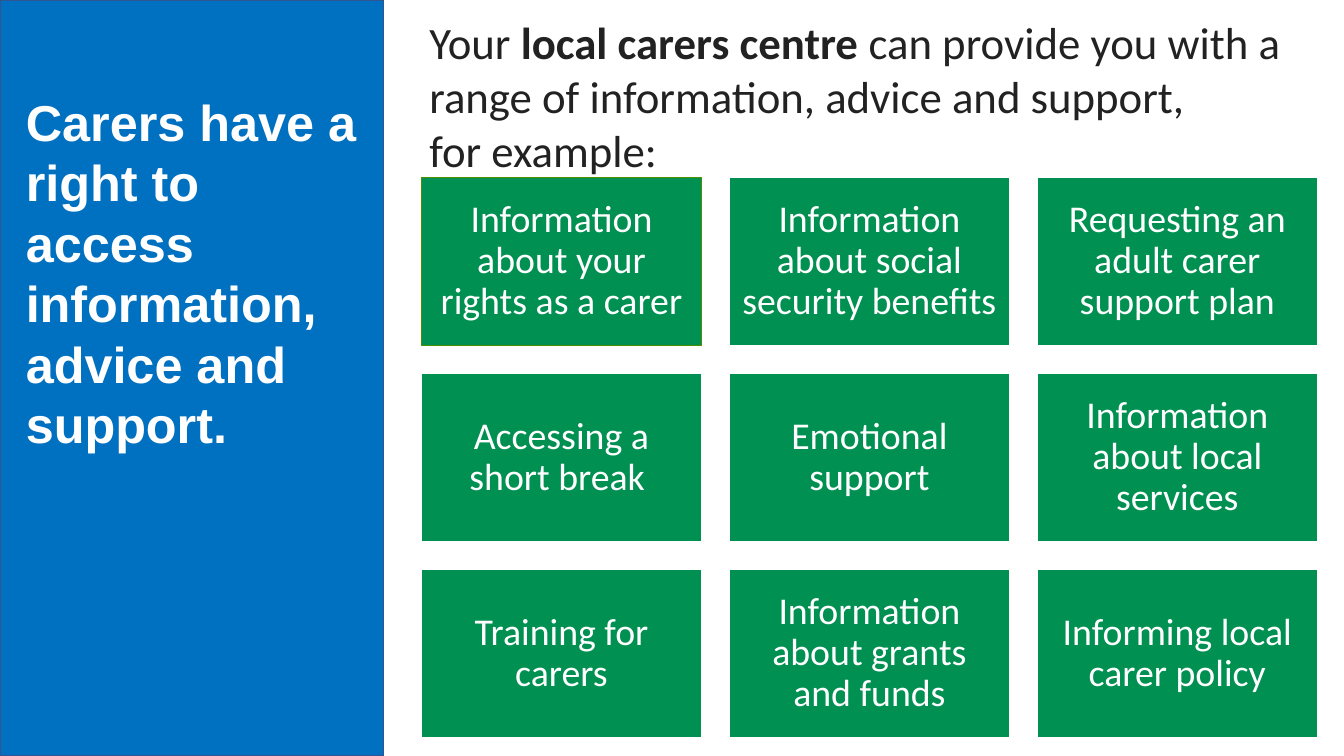
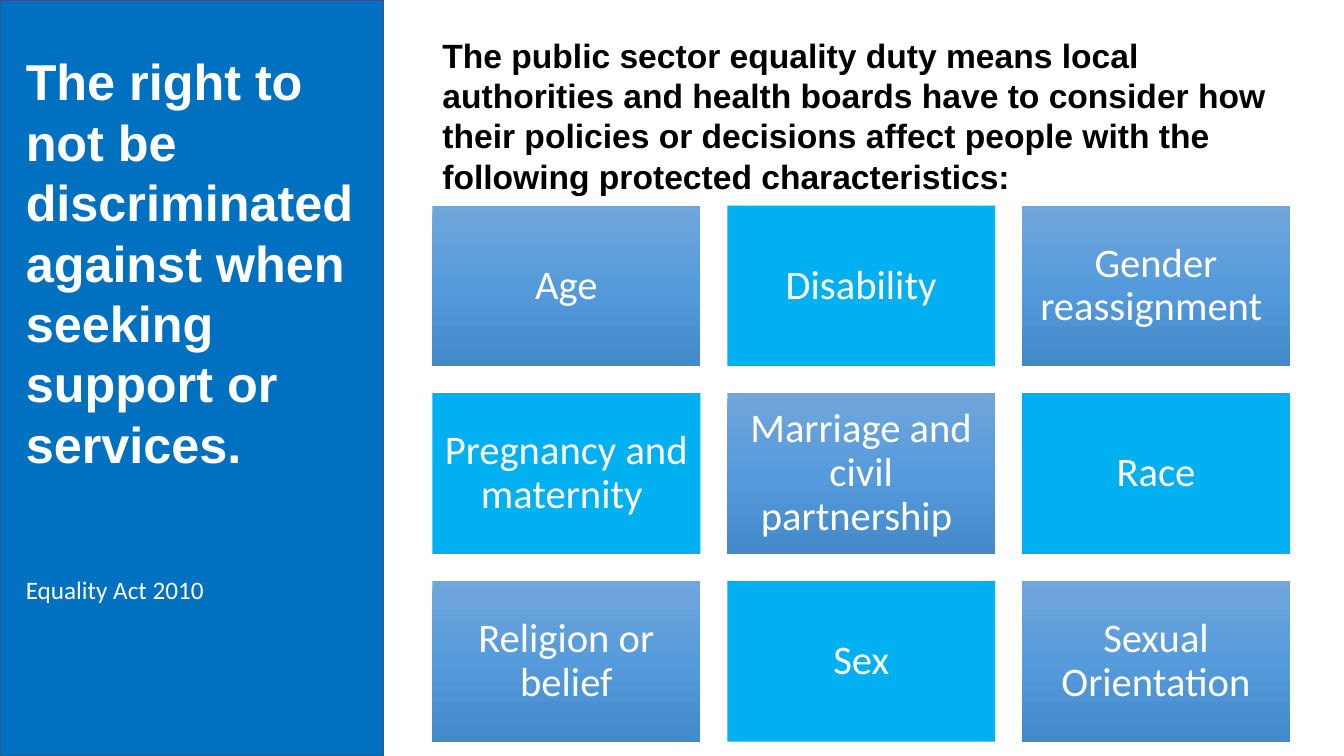
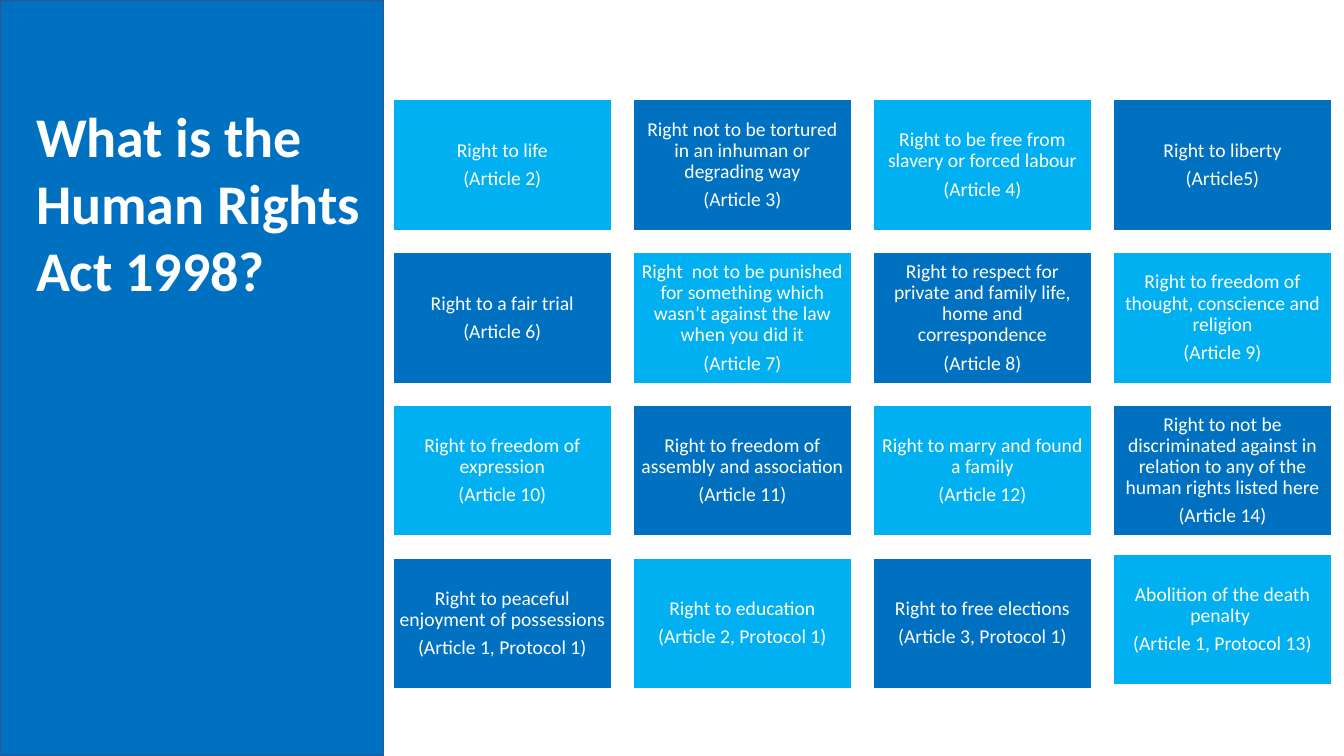
"""Build three slides on the rights of carers."""
from copy import deepcopy
from dataclasses import dataclass

from pptx import Presentation
from pptx.dml.color import RGBColor
from pptx.enum.shapes import MSO_SHAPE
from pptx.enum.text import MSO_ANCHOR, PP_ALIGN
from pptx.oxml.ns import qn
from pptx.shapes.autoshape import Shape
from pptx.slide import Slide
from pptx.text.text import TextFrame, _Run
from pptx.util import Cm, Pt

RECT = MSO_SHAPE.RECTANGLE
MIDDLE = MSO_ANCHOR.MIDDLE
CENTER = PP_ALIGN.CENTER

HUES = {
    "blue": "0070C0",
    "navy": "325491",
    "sky": "00B0F0",
    "green": "009051",
    "moss": "4E8F00",
    "white": "FFFFFF",
    "black": "000000",
    "ink": "222222",
    "pale": "71A6DB",
    "mid": "559BDB",
    "deep": "448ACA",
}
FADE = ((0, "pale"), (0.5, "mid"), (1, "deep"))


@dataclass
class Note:
    text: str
    left: float
    top: float
    width: float
    height: float
    size: float
    font: str = "Arial"
    hue: str = "white"
    bold: bool = True


@dataclass
class Grid:
    texts: list[str]
    cols: int
    left: float
    top: float
    width: float
    height: float
    gap: float
    size: float
    inset: float
    fills: tuple[str, str]
    edge: str = "white"


def shade(name: str) -> RGBColor:
    return RGBColor.from_string(HUES[name])


def style(run: _Run, size: float, font: str, hue: str, bold: bool) -> None:
    run.font.size = Pt(size)
    run.font.name = font
    run.font.bold = bold
    run.font.color.rgb = shade(hue)


def paint(shape: Shape, fill: str) -> None:
    if fill != "fade":
        shape.fill.solid()
        shape.fill.fore_color.rgb = shade(fill)
        return
    shape.fill.gradient()
    shape.fill.gradient_angle = 270
    stops = shape.element.find(".//" + qn("a:gsLst"))
    stops.append(deepcopy(stops[0]))
    for stop, (place, hue) in zip(shape.fill.gradient_stops, FADE):
        stop.position = place
        stop.color.rgb = shade(hue)


def block(slide: Slide, left: float, top: float, width: float, height: float,
          fill: str, edge: str) -> Shape:
    shape = slide.shapes.add_shape(RECT, Cm(left), Cm(top), Cm(width), Cm(height))
    shape.shadow.inherit = False
    paint(shape, fill)
    if edge:
        shape.line.color.rgb = shade(edge)
        shape.line.width = Pt(1)
    else:
        shape.line.fill.background()
    return shape


def write(slide: Slide, note: Note) -> TextFrame:
    box = slide.shapes.add_textbox(
        Cm(note.left), Cm(note.top), Cm(note.width), Cm(note.height))
    frame = box.text_frame
    frame.word_wrap = True
    frame.text = note.text
    for para in frame.paragraphs:
        for run in para.runs:
            style(run, note.size, note.font, note.hue, note.bold)
    return frame


def tile(slide: Slide, grid: Grid) -> list[Shape]:
    tiles = []
    for spot, text in enumerate(grid.texts):
        row, col = divmod(spot, grid.cols)
        shape = block(
            slide,
            grid.left + col * (grid.width + grid.gap),
            grid.top + row * (grid.height + grid.gap),
            grid.width, grid.height,
            grid.fills[(row + col) % 2], grid.edge)
        frame = shape.text_frame
        frame.word_wrap = True
        frame.vertical_anchor = MIDDLE
        frame.margin_left = frame.margin_right = Cm(grid.inset)
        frame.margin_top = frame.margin_bottom = Cm(grid.inset)
        frame.text = text
        for para in frame.paragraphs:
            para.alignment = CENTER
            para.line_spacing = 0.9
            para.space_after = Pt(round(0.35 * grid.size, 1))
            for run in para.runs:
                style(run, grid.size, "Calibri", "white", False)
        tiles.append(shape)
    return tiles


HELP = [
    "Information about your rights as a carer",
    "Information about social security benefits",
    "Requesting an adult carer support plan",
    "Accessing a short break ",
    "Emotional support",
    "Information about local services",
    "Training for carers",
    "Information about grants and funds",
    "Informing local carer policy",
]
TRAITS = [
    "Age", "Disability", "Gender reassignment ",
    "Pregnancy and maternity ", "Marriage and civil partnership ", "Race",
    "Religion or belief", "Sex", "Sexual Orientation",
]
RIGHTS = [
    "Right to life\n(Article 2)",
    "Right not to be tortured in an inhuman or degrading way\n(Article 3)",
    "Right to be free from slavery or forced labour\n(Article 4)",
    "Right to liberty\n(Article5)",
    "Right to a fair trial\n(Article 6)",
    "Right  not to be punished for something which wasn’t against the law "
    "when you did it\n(Article 7)",
    "Right to respect for private and family life, home and correspondence\n(Article 8)",
    "Right to freedom of thought, conscience and religion\n(Article 9)",
    "Right to freedom of expression\n(Article 10)",
    "Right to freedom of assembly and association\n(Article 11)",
    "Right to marry and found a family\n(Article 12)",
    "Right to not be discriminated against in relation to any of the human "
    "rights listed here\n(Article 14)",
    "Right to peaceful enjoyment of possessions\n(Article 1, Protocol 1)",
    "Right to education\n(Article 2, Protocol 1)",
    "Right to free elections\n(Article 3, Protocol 1)",
    "Abolition of the death penalty \n(Article 1, Protocol 13)",
]


def support(slide: Slide) -> None:
    write(slide, Note("Carers have a right to access information, advice and support.",
                      0.4, 2.17, 8.95, 9.5, 36))
    lead = Note("Your \nfor example:", 10.57, 0.25, 22.63, 4.37, 32,
                "Calibri", "ink", False)
    first = write(slide, lead).paragraphs[0]
    for text, bold in (
            ("local carers centre ", True),
            ("can provide you with a range of information, advice and support,", False)):
        run = first.add_run()
        run.text = text
        style(run, lead.size, lead.font, lead.hue, bold)
    tiles = tile(slide, Grid(HELP, 3, 10.62, 4.47, 7.06, 4.24, 0.7, 27, 0.28,
                             ("green", "green")))
    tiles[0].line.color.rgb = shade("moss")


def duty(slide: Slide) -> None:
    write(slide, Note("The right to not be discriminated against when seeking "
                      "support or services.", 0.4, 1.14, 8.95, 11.02, 36))
    write(slide, Note("The public sector equality duty means local authorities and "
                      "health boards have to consider how their policies or decisions "
                      "affect people with the following protected characteristics:",
                      10.9, 0.75, 22.58, 5.13, 24, hue="black"))
    write(slide, Note("Equality Act 2010", 0.4, 14.35, 6.63, 1.02, 18,
                      "Calibri", bold=False))
    tile(slide, Grid(TRAITS, 3, 10.9, 5.18, 6.75, 4.05, 0.68, 29, 0.3,
                     ("fade", "sky"), ""))


def act(slide: Slide) -> None:
    write(slide, Note("What is the Human Rights Act 1998?",
                      0.66, 2.43, 8.84, 5.38, 40, "Calibri"))
    tiles = tile(slide, Grid(RIGHTS, 4, 9.91, 2.51, 5.5, 3.3, 0.55, 14, 0.15,
                             ("sky", "blue")))
    tiles[-1].top -= Cm(0.1)


def main() -> None:
    deck = Presentation()
    deck.slide_width = Cm(33.87)
    deck.slide_height = Cm(19.05)
    for draw in (support, duty, act):
        slide = deck.slides.add_slide(deck.slide_layouts[6])
        block(slide, 0, 0, 9.67, 19.05, "blue", "navy")
        draw(slide)
    deck.save("out.pptx")


if __name__ == "__main__":
    main()
